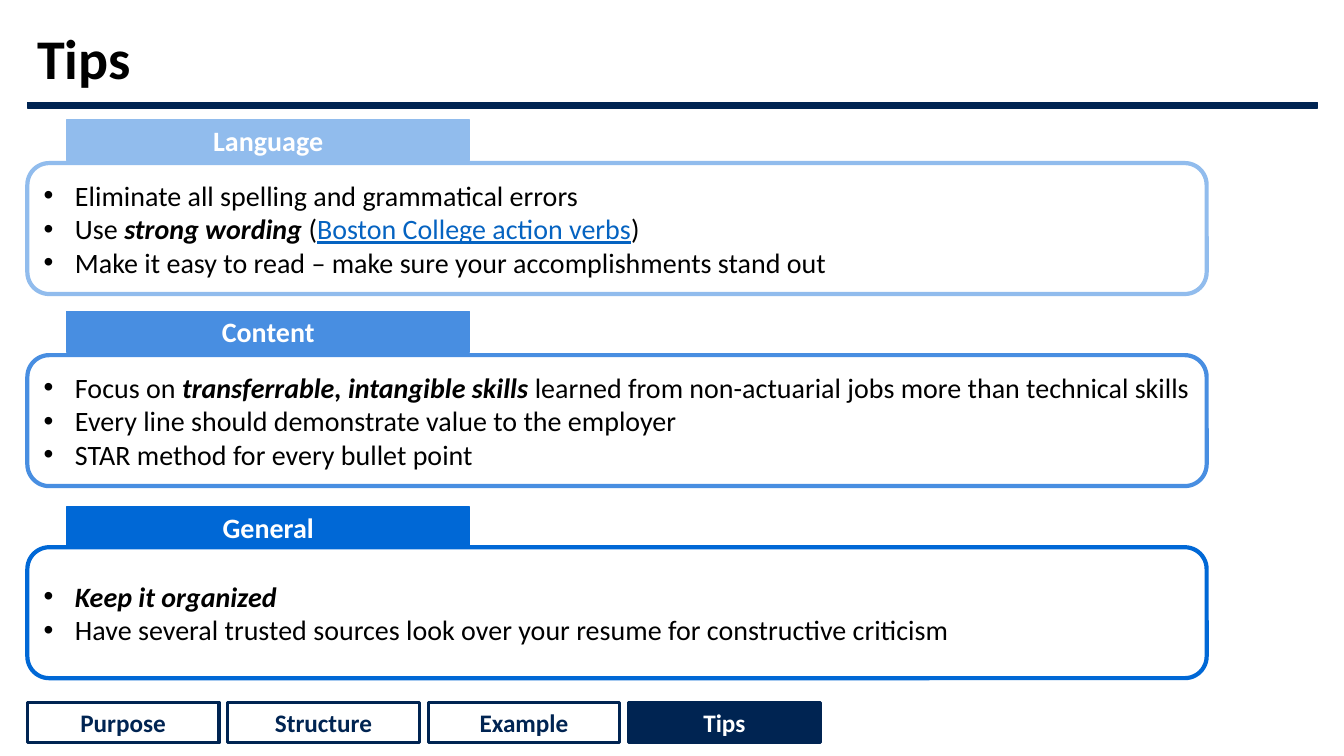
"""Build the resume tips slide."""
import pptx
import pptx.util
import pptx.dml.color
import pptx.enum.shapes
import pptx.enum.text
import pptx.oxml
import lxml.etree

Cm, Pt = pptx.util.Cm, pptx.util.Pt
KIND = pptx.enum.shapes.MSO_SHAPE
ALIGN = pptx.enum.text.PP_ALIGN
MIDDLE = pptx.enum.text.MSO_ANCHOR.MIDDLE

HUES = {"navy": "002452", "light": "91BCED", "mid": "488EE1", "deep": "0068D6",
        "link": "0563C1", "black": "000000", "white": "FFFFFF"}
TITLE = "Tips"
CARDS = [
    ("Language", "light", 3.02, [
        [("Eliminate all spelling and grammatical errors", "plain")],
        [("Use ", "plain"), ("strong wording ", "strong"), ("(", "plain"),
         ("Boston College action verbs", "link"), (")", "plain")],
        [("Make it easy to read – make sure your accomplishments stand out", "plain")],
    ]),
    ("Content", "mid", 7.85, [
        [("Focus on ", "plain"), ("transferrable, intangible skills ", "strong"),
         ("learned from non-actuarial jobs more than technical skills", "plain")],
        [("Every line should demonstrate value to the employer", "plain")],
        [("STAR method for every bullet point", "plain")],
    ]),
    ("General", "deep", 12.78, [
        [("Keep it organized", "strong")],
        [("Have several trusted sources look over your resume for constructive criticism",
          "plain")],
    ]),
]
STEPS = ["Purpose", "Structure", "Example", "Tips"]

LEFT, WIDE = 0.69, 32.51
CARD_TOP, CARD_STEP, CARD_W, CARD_H = 4.11, 4.84, 29.72, 3.3
TAB_LEFT, TAB_W, TAB_H = 1.68, 10.16, 1.02
STEP_TOP, STEP_W, STEP_GAP = 17.7, 4.83, 0.22


def paint(font, size, hue, bold=False):
    font.name = "Calibri"
    font.size = Pt(size)
    font.bold = bold
    font.color.rgb = pptx.dml.color.RGBColor.from_string(HUES[hue])


def add_box(slide, kind, spot, fill, edge, weight):
    box = slide.shapes.add_shape(kind, *map(Cm, spot))
    box.shadow.inherit = False
    box.fill.solid()
    box.fill.fore_color.rgb = pptx.dml.color.RGBColor.from_string(HUES[fill])
    box.line.color.rgb = pptx.dml.color.RGBColor.from_string(HUES[edge])
    box.line.width = Pt(weight)
    box.text_frame.vertical_anchor = MIDDLE
    return box


def add_label(box, text, size, hue):
    box.text_frame.text = text
    para = box.text_frame.paragraphs[0]
    para.alignment = ALIGN.CENTER
    paint(para.runs[0].font, size, hue, True)


def add_bullet(para):
    props = para._p.get_or_add_pPr()
    props.set("marL", str(Cm(0.79)))
    props.set("indent", str(-Cm(0.79)))
    tag = pptx.oxml.ns.qn
    lxml.etree.SubElement(props, tag("a:buFont")).set("typeface", "Arial")
    lxml.etree.SubElement(props, tag("a:buChar")).set("char", "•")


def add_list(box, lines):
    frame = box.text_frame
    for row, parts in enumerate(lines):
        para = frame.add_paragraph() if row else frame.paragraphs[0]
        add_bullet(para)
        para.alignment = ALIGN.LEFT
        for text, style in parts:
            run = para.add_run()
            run.text = text
            strong, link = style == "strong", style == "link"
            paint(run.font, 20, "link" if link else "black", strong)
            run.font.italic = strong
            run.font.underline = link


def add_title(slide):
    add_box(slide, KIND.RECTANGLE, (LEFT, 2.59, WIDE, 0.13), "navy", "navy", 1)
    box = slide.shapes.add_textbox(*map(Cm, (LEFT, 0.48, WIDE, 2.11)))
    frame = box.text_frame
    frame.word_wrap = True
    frame.vertical_anchor = MIDDLE
    frame.text = TITLE
    frame.paragraphs[0].line_spacing = 0.9
    paint(frame.paragraphs[0].runs[0].font, 40, "black", True)


def main():
    deck = pptx.Presentation()
    deck.slide_width, deck.slide_height = Cm(33.87), Cm(19.05)
    slide = deck.slides.add_slide(deck.slide_layouts[6])
    add_title(slide)
    for row, (name, hue, top, lines) in enumerate(CARDS):
        spot = (LEFT, CARD_TOP + row * CARD_STEP, CARD_W, CARD_H)
        card = add_box(slide, KIND.ROUNDED_RECTANGLE, spot, "white", hue, 3)
        add_list(card, lines)
        spot = (TAB_LEFT, top, TAB_W, TAB_H)
        tab = add_box(slide, KIND.RECTANGLE, spot, hue, hue, 1)
        add_label(tab, name, 20, "white")
    for col, name in enumerate(STEPS):
        fill, ink = ("navy", "white") if name == TITLE else ("white", "navy")
        spot = (LEFT + col * (STEP_W + STEP_GAP), STEP_TOP, STEP_W, TAB_H)
        step = add_box(slide, KIND.RECTANGLE, spot, fill, "navy", 2.25)
        add_label(step, name, 18, ink)
    deck.save("out.pptx")


if __name__ == "__main__":
    main()
